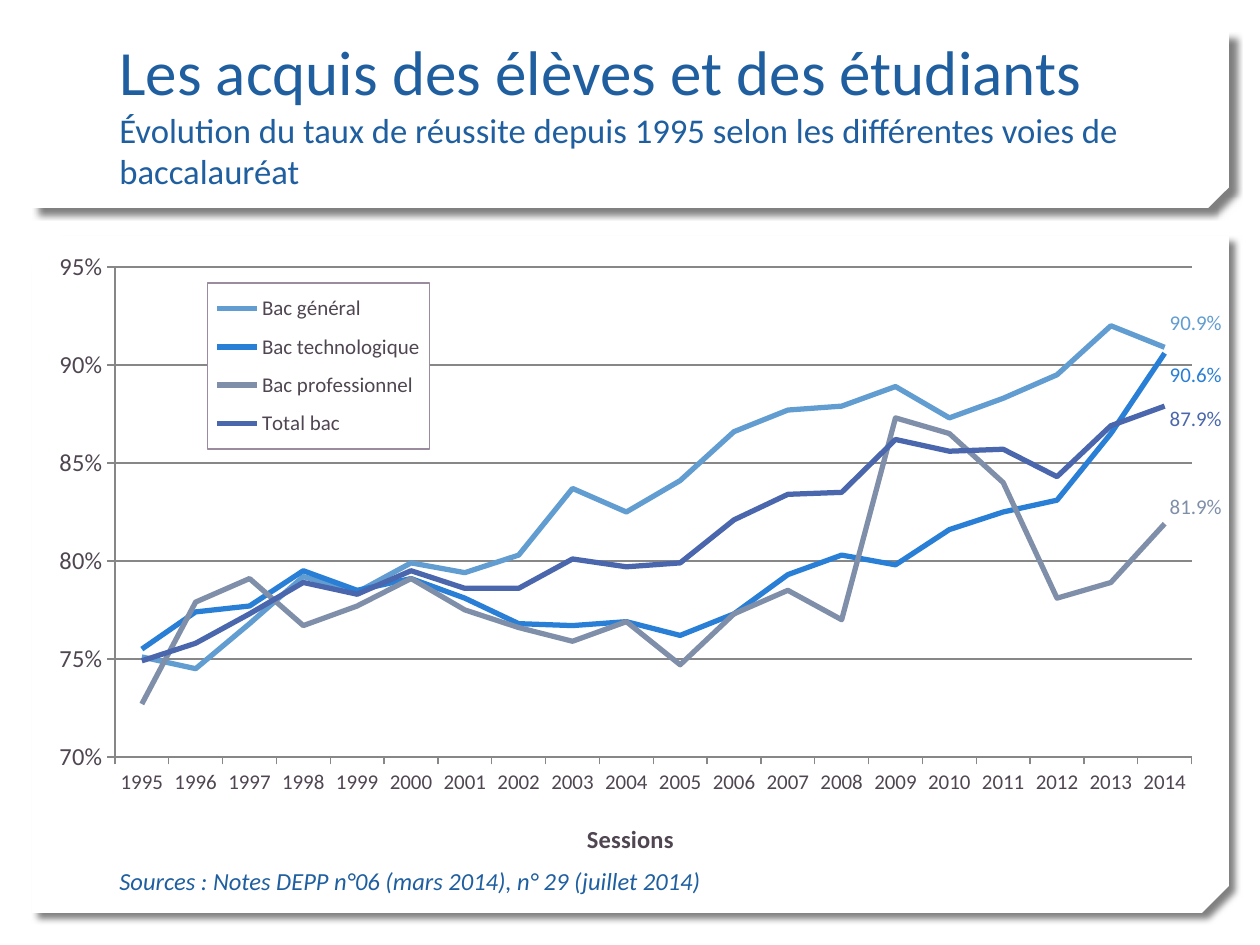
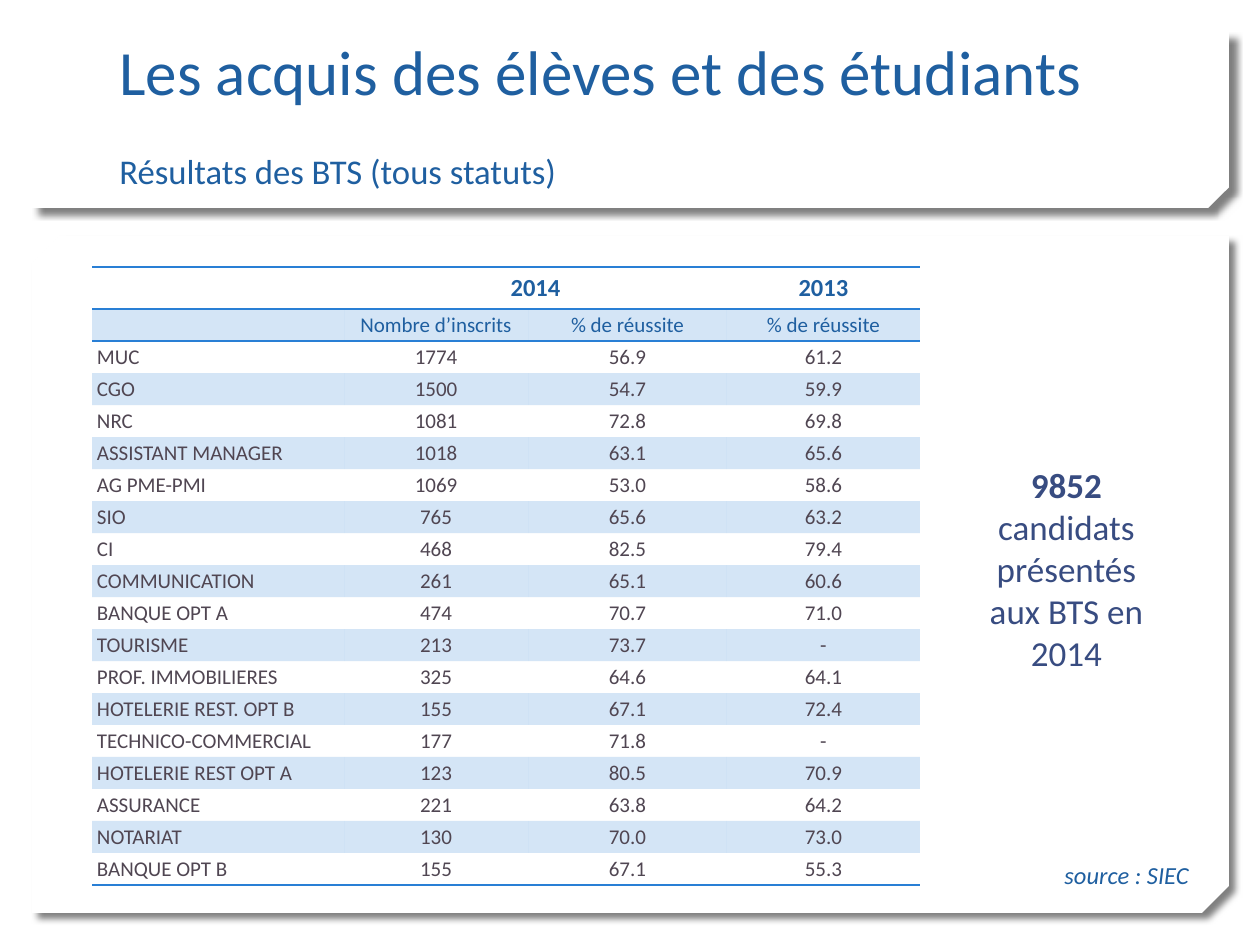
from lxml import etree
from pptx import Presentation
from pptx import util as u
from pptx.chart.data import CategoryChartData
from pptx.dml.color import RGBColor
from pptx.enum import chart as charts, shapes, text
from pptx.oxml import parse_xml
from pptx.oxml.ns import nsdecls, qn

FONT = "Calibri"
COLORS = {
    "title": "1F5FA0", "body": "504652", "callout": "384C81", "accent": "297FD5",
    "panel": "FFFFFF", "grid": "878787", "legend_line": "9A8B9E", "shadow": "000000",
}
TITLE = "Les acquis des élèves et des étudiants"
PANELS = [((32, 236, 1197, 677), 0.04), ((32, 32, 1197, 176), 0.117)]
TITLE_BOX = (107, 40, 1045, 158)

RATES = {
    "subtitle": "Évolution du taux de réussite depuis 1995 selon les différentes voies de baccalauréat",
    "axis_title": "Sessions",
    "source": "Sources : Notes DEPP n°06 (mars 2014), n° 29 (juillet 2014)",
}
YEARS = range(1995, 2015)
# name, colour, vertical shift of the last label in px, success rates in percent
SERIES = [
    ("Bac général", "629DD1", -24,
     [75.1, 74.5, 76.8, 79.2, 78.4, 79.9, 79.4, 80.3, 83.7, 82.5,
      84.1, 86.6, 87.7, 87.9, 88.9, 87.3, 88.3, 89.5, 92.0, 90.9]),
    ("Bac technologique", "297FD5", 22,
     [75.5, 77.4, 77.7, 79.5, 78.5, 79.1, 78.1, 76.8, 76.7, 76.9,
      76.2, 77.3, 79.3, 80.3, 79.8, 81.6, 82.5, 83.1, 86.5, 90.6]),
    ("Bac professionnel", "7F8FA9", -17,
     [72.7, 77.9, 79.1, 76.7, 77.7, 79.1, 77.5, 76.6, 75.9, 76.9,
      74.7, 77.3, 78.5, 77.0, 87.3, 86.5, 84.0, 78.1, 78.9, 81.9]),
    ("Total bac", "4A66AC", 13,
     [74.9, 75.8, 77.3, 78.9, 78.3, 79.5, 78.6, 78.6, 80.1, 79.7,
      79.9, 82.1, 83.4, 83.5, 86.2, 85.6, 85.7, 84.3, 86.9, 87.9]),
]
CHART_BOX = (35, 239, 1187, 634)
PLOT_BOX = (115, 267, 1078, 490)
LEGEND_BOX = (208, 283, 222, 166)
AXIS_TITLE_AT = (583, 817)

BTS = {
    "subtitle": "Résultats des BTS (tous statuts)",
    "callout": [("9852", True), (" candidats présentés aux BTS en 2014", False)],
    "source": "source : SIEC",
}
BTS_ROWS = [
    ("", "2014", "", "2013"),
    ("", "Nombre d’inscrits", "% de réussite", "% de réussite"),
    ("MUC", "1774", "56.9", "61.2"),
    ("CGO", "1500", "54.7", "59.9"),
    ("NRC", "1081", "72.8", "69.8"),
    ("ASSISTANT MANAGER", "1018", "63.1", "65.6"),
    ("AG PME-PMI", "1069", "53.0", "58.6"),
    ("SIO", "765", "65.6", "63.2"),
    ("CI", "468", "82.5", "79.4"),
    ("COMMUNICATION", "261", "65.1", "60.6"),
    ("BANQUE OPT A", "474", "70.7", "71.0"),
    ("TOURISME", "213", "73.7", "-"),
    ("PROF. IMMOBILIERES", "325", "64.6", "64.1"),
    ("HOTELERIE REST. OPT B", "155", "67.1", "72.4"),
    ("TECHNICO-COMMERCIAL", "177", "71.8", "-"),
    ("HOTELERIE REST OPT A", "123", "80.5", "70.9"),
    ("ASSURANCE", "221", "63.8", "64.2"),
    ("NOTARIAT", "130", "70.0", "73.0"),
    ("BANQUE OPT B", "155", "67.1", "55.3"),
]
TABLE_AT = (92, 267)
COLUMN_WIDTHS = [252, 184, 199, 193]
HEADER_HEIGHT, ROW_HEIGHT = 42, 32


def px(value):
    return u.Emu(round(value * 914400 / 126))


def box_emu(box):
    return [px(value) for value in box]


def rgb(value):
    return RGBColor.from_string(COLORS.get(value, value))


def set_font(font, size, color, **styles):
    for name, value in {"name": FONT, "size": u.Pt(size), **styles}.items():
        setattr(font, name, value)
    font.color.rgb = rgb(color)


def add_run(paragraph, words, size, color, **styles):
    run = paragraph.add_run()
    run.text = words
    set_font(run.font, size, color, **styles)


def add_text_frame(slide, box, **settings):
    frame = slide.shapes.add_textbox(*box_emu(box)).text_frame
    for name, value in {"word_wrap": True, **settings}.items():
        setattr(frame, name, value)
    return frame


def add_panel(slide, box, snip):
    """White sheet with a cut lower right corner and a soft shadow."""
    shape = slide.shapes.add_shape(shapes.MSO_SHAPE.SNIP_2_DIAG_RECTANGLE, *box_emu(box))
    shape.adjustments[0], shape.adjustments[1] = 0, snip
    shape.fill.solid()
    shape.fill.fore_color.rgb = rgb("panel")
    shape.line.fill.background()
    properties = shape.element.spPr
    properties.find(qn("a:xfrm")).set("flipV", "1")
    properties.append(parse_xml(
        f'<a:effectLst {nsdecls("a")}><a:outerShdw blurRad="50800" dist="63500" dir="2700000" '
        f'algn="tl" rotWithShape="0"><a:srgbClr val="{COLORS["shadow"]}"><a:alpha val="50000"/>'
        '</a:srgbClr></a:outerShdw></a:effectLst>'))


def add_base_slide(presentation, subtitle, gap=0):
    slide = presentation.slides.add_slide(presentation.slide_layouts[6])
    for box, snip in PANELS:
        add_panel(slide, box, snip)
    frame = add_text_frame(slide, TITLE_BOX, vertical_anchor=text.MSO_ANCHOR.BOTTOM)
    add_run(frame.paragraphs[0], TITLE, 36, "title")
    paragraph = frame.add_paragraph()
    paragraph.space_before = u.Pt(gap)
    add_run(paragraph, subtitle, 19.8, "title")
    return slide


def add_source(slide, words, box, **settings):
    frame = add_text_frame(slide, box, **settings)
    add_run(frame.paragraphs[0], words, 14, "title", italic=True)


def place(parent, index, target="", **values):
    """Give a chart part a manual layout, as fractions of the chart."""
    for old in parent.findall(qn("c:layout")):
        parent.remove(old)
    layout = etree.Element(qn("c:layout"))
    manual = etree.SubElement(layout, qn("c:manualLayout"))
    fields = {"layoutTarget": target, **values}
    for name, value in fields.items():
        if value != "":
            etree.SubElement(manual, qn(f"c:{name}"), val=str(value))
    parent.insert(index, layout)


def chart_fractions(box):
    left, top, width, height = CHART_BOX
    values = {"xMode": "edge", "yMode": "edge",
              "x": round((box[0] - left) / width, 4), "y": round((box[1] - top) / height, 4)}
    if len(box) == 4:
        values |= {"w": round(box[2] / width, 4), "h": round(box[3] / height, 4)}
    return values


def style_axes(chart):
    for axis, size in ((chart.category_axis, 12), (chart.value_axis, 14)):
        axis.major_tick_mark = charts.XL_TICK_MARK.OUTSIDE
        axis.minor_tick_mark = charts.XL_TICK_MARK.NONE
        set_font(axis.tick_labels.font, size, "body")
        axis.format.line.color.rgb = rgb("grid")
    chart.category_axis.has_major_gridlines = False
    title = chart.category_axis.axis_title.text_frame.paragraphs[0]
    add_run(title, RATES["axis_title"], 14, "body", bold=True)
    value_axis = chart.value_axis
    for name, value in {"minimum_scale": 0.7, "maximum_scale": 0.95, "major_unit": 0.05,
                        "has_major_gridlines": True}.items():
        setattr(value_axis, name, value)
    value_axis.major_gridlines.format.line.color.rgb = rgb("grid")
    value_axis.major_gridlines.format.line.width = u.Pt(1)
    value_axis.tick_labels.number_format = "0%"
    value_axis.tick_labels.number_format_is_linked = False


def style_series(series, color):
    series.smooth = False
    series.marker.style = charts.XL_MARKER_STYLE.NONE
    series.format.line.color.rgb = rgb(color)
    series.format.line.width = u.Pt(3)
    series.data_labels.show_value = False
    label = series.points[len(YEARS) - 1].data_label
    set_font(label.font, 12, color)
    label.position = charts.XL_LABEL_POSITION.RIGHT


def add_legend(chart):
    chart.has_legend = True
    legend = chart.legend
    legend.position = charts.XL_LEGEND_POSITION.LEFT
    legend.include_in_layout = True
    set_font(legend.font, 12, "body")
    element = chart.element.find(".//" + qn("c:legend"))
    place(element, 1, **chart_fractions(LEGEND_BOX))
    element.find(qn("c:txPr")).addprevious(parse_xml(
        f'<c:spPr {nsdecls("c", "a")}><a:solidFill><a:srgbClr val="{COLORS["panel"]}"/></a:solidFill>'
        f'<a:ln w="9525"><a:solidFill><a:srgbClr val="{COLORS["legend_line"]}"/></a:solidFill></a:ln>'
        '</c:spPr>'))


def add_rates_chart(slide):
    data = CategoryChartData(number_format="0.0%")
    data.categories = [str(year) for year in YEARS]
    for name, _, _, percents in SERIES:
        data.add_series(name, [round(percent / 100, 3) for percent in percents])
    chart = slide.shapes.add_chart(charts.XL_CHART_TYPE.LINE, *box_emu(CHART_BOX), data).chart
    chart.has_title = False
    chart.font.name, chart.font.size = FONT, u.Pt(18)
    chart.plots[0].vary_by_categories = False
    style_axes(chart)
    for series, (_, color, _, _) in zip(chart.plots[0].series, SERIES):
        style_series(series, color)
    add_legend(chart)
    root = chart.element
    place(root.find(".//" + qn("c:plotArea")), 0, "inner", **chart_fractions(PLOT_BOX))
    place(root.find(".//" + qn("c:catAx")).find(qn("c:title")), 1, **chart_fractions(AXIS_TITLE_AT))
    for label, (_, _, shift, _) in zip(root.iter(qn("c:dLbl")), SERIES):
        place(label, 1, x=0, y=round(shift / CHART_BOX[3], 4))
    for leader in root.iter(qn("c:showLeaderLines")):
        leader.set("val", "0")


def fill_cell(cell, words, row, column):
    header, label = row == 0, column == 0
    size = 14 if header else 12
    cell.vertical_anchor = text.MSO_ANCHOR.MIDDLE
    if not header:
        side = 5 if row > 1 and column in (0, 3) else 1
        for name, margin in {"left": side, "right": side, "top": 1, "bottom": 0}.items():
            setattr(cell, f"margin_{name}", px(margin))
    paragraph = cell.text_frame.paragraphs[0]
    paragraph.alignment = text.PP_ALIGN.LEFT if label else text.PP_ALIGN.CENTER
    if words:
        add_run(paragraph, words, size, "title" if row < 2 else "body", bold=header)
    else:
        etree.SubElement(paragraph._p, qn("a:endParaRPr"), sz=str(size * 100))


def paint_cell(cell, row):
    """Tint every other row and rule the header and the last row."""
    if row % 2:
        cell.fill.solid()
        cell.fill.fore_color.rgb = rgb("accent")
    else:
        cell.fill.background()
    properties = cell._tc.get_or_add_tcPr()
    for color in properties.iter(qn("a:srgbClr")):
        etree.SubElement(color, qn("a:alpha"), val="20000")
    sides = {0: "TB", 1: "T", len(BTS_ROWS) - 1: "B"}.get(row, "")
    for index, side in enumerate(sides):
        properties.insert(index, parse_xml(
            f'<a:ln{side} {nsdecls("a")} w="12700"><a:solidFill>'
            f'<a:srgbClr val="{COLORS["accent"]}"/></a:solidFill></a:ln{side}>'))


def add_results_table(slide):
    heights = [HEADER_HEIGHT] + [ROW_HEIGHT] * (len(BTS_ROWS) - 1)
    box = (*TABLE_AT, sum(COLUMN_WIDTHS), sum(heights))
    table = slide.shapes.add_table(len(heights), len(COLUMN_WIDTHS), *box_emu(box)).table
    table.first_row = table.horz_banding = False
    no_grid = "{2D5ABB26-0587-4C30-8999-92F81FD0307C}"
    table._tbl.tblPr.find(qn("a:tableStyleId")).text = no_grid
    for column, width in zip(table.columns, COLUMN_WIDTHS):
        column.width = px(width)
    for row, (values, height) in enumerate(zip(BTS_ROWS, heights)):
        table.rows[row].height = px(height)
        for column, words in enumerate(values):
            fill_cell(table.cell(row, column), words, row, column)
            paint_cell(table.cell(row, column), row)
    table.cell(0, 1).merge(table.cell(0, 2))


def add_callout(slide):
    paragraph = add_text_frame(slide, (959, 457, 215, 224)).paragraphs[0]
    paragraph.alignment = text.PP_ALIGN.CENTER
    for words, bold in BTS["callout"]:
        add_run(paragraph, words, 20, "callout", bold=bold)


def main():
    presentation = Presentation()
    presentation.slide_width, presentation.slide_height = px(1260), px(945)

    rates_slide = add_base_slide(presentation, RATES["subtitle"])
    add_rates_chart(rates_slide)
    add_source(rates_slide, RATES["source"], (107, 860, 683, 43))

    bts_slide = add_base_slide(presentation, BTS["subtitle"], gap=24)
    add_results_table(bts_slide)
    add_callout(bts_slide)
    add_source(bts_slide, BTS["source"], (1052, 854, 156, 43), word_wrap=False)

    presentation.save("out.pptx")


if __name__ == "__main__":
    main()
